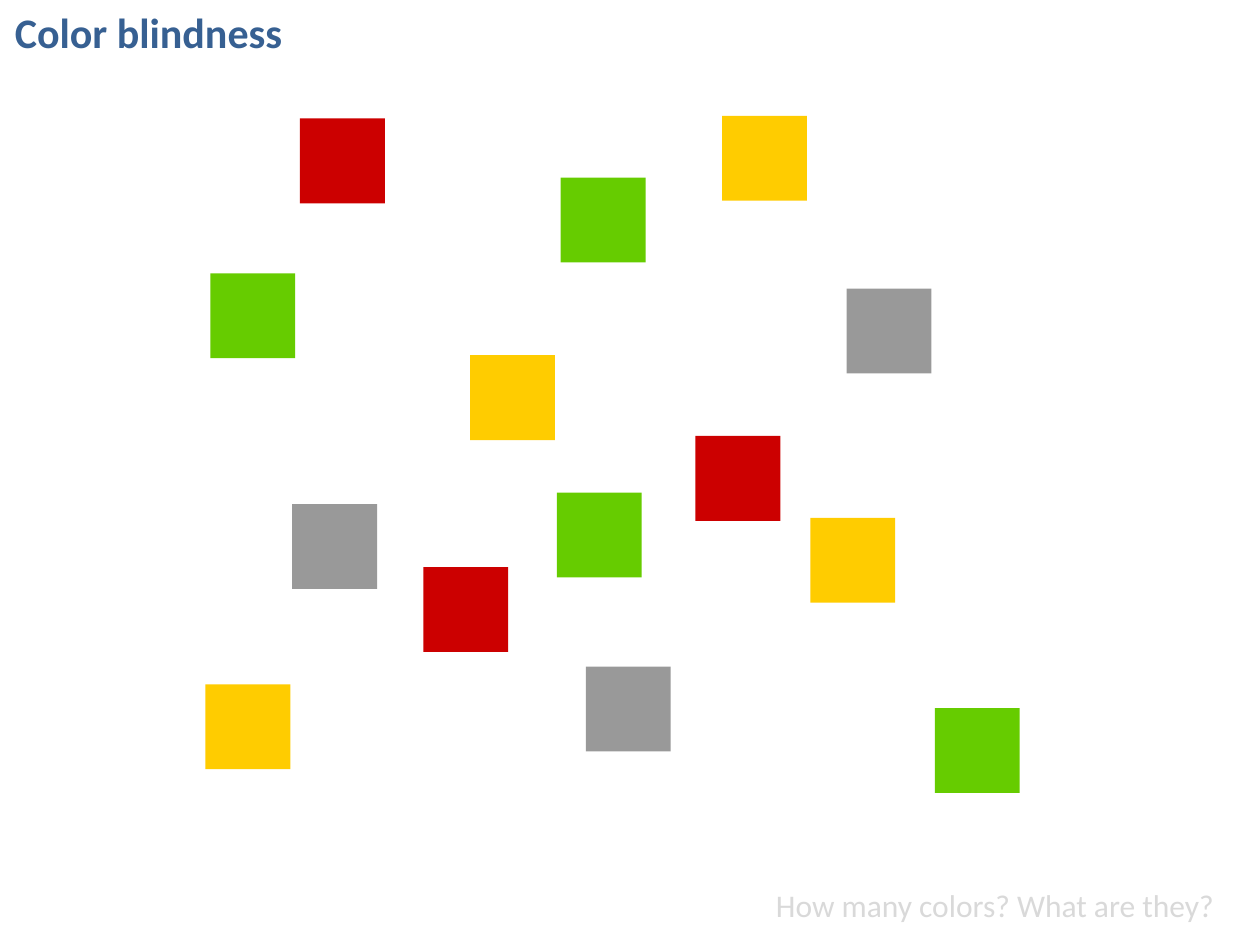
import pptx
import pptx.util
import pptx.dml.color
import pptx.enum.shapes
import pptx.enum.text

Pt = pptx.util.Pt

COLORS = {
    "title": "376092",
    "question": "D9D9D9",
    "red": "CC0000",
    "yellow": "FFCC00",
    "green": "66CC00",
    "gray": "999999",
}

SQUARE_SIZE = 48.5

# Left and top of each square, in points, by color
SQUARES = {
    "green": [(320.4, 101.5), (318.2, 281.5), (120.2, 156.2), (534.2, 404.6)],
    "yellow": [(268.6, 203), (117.4, 391), (463, 295.9), (412.6, 66.2)],
    "red": [(397.4, 249.1), (171.4, 67.7), (241.9, 324)],
    "gray": [(167, 288), (334.8, 380.9), (483.8, 164.9)],
}

TITLE_FORMAT = {"name": "Calibri", "size": Pt(24), "bold": True}
QUESTION_FORMAT = {"name": "Calibri", "size": Pt(18), "bold": False}


def rgb(name):
    return pptx.dml.color.RGBColor.from_string(COLORS[name])


def add_square(slide, left, top, color):
    square = slide.shapes.add_shape(
        pptx.enum.shapes.MSO_SHAPE.RECTANGLE,
        Pt(left), Pt(top), Pt(SQUARE_SIZE), Pt(SQUARE_SIZE),
    )
    square.shadow.inherit = False
    square.fill.solid()
    square.fill.fore_color.rgb = rgb(color)
    square.line.fill.background()


def add_text(slide, text, box, color, font_format, wrap):
    shape = slide.shapes.add_textbox(*(Pt(length) for length in box))
    frame = shape.text_frame
    frame.word_wrap = wrap
    frame.auto_size = pptx.enum.text.MSO_AUTO_SIZE.SHAPE_TO_FIT_TEXT
    paragraph = frame.paragraphs[0]
    run = paragraph.add_run()
    run.text = text
    for attribute, value in font_format.items():
        setattr(run.font, attribute, value)
    run.font.color.rgb = rgb(color)


def main():
    presentation = pptx.Presentation()
    presentation.slide_width = Pt(720)
    presentation.slide_height = Pt(540)
    slide = presentation.slides.add_slide(presentation.slide_layouts[6])

    # Title
    add_text(slide, "Color blindness", (1.4, 0, 674.6, 36),
             "title", TITLE_FORMAT, True)

    # Scattered squares
    for color, positions in SQUARES.items():
        for left, top in positions:
            add_square(slide, left, top, color)

    # Question to the audience
    add_text(slide, "How many colors? What are they?", (436.3, 502.6, 267.8, 28.8),
             "question", QUESTION_FORMAT, False)

    presentation.save("out.pptx")


if __name__ == "__main__":
    main()
